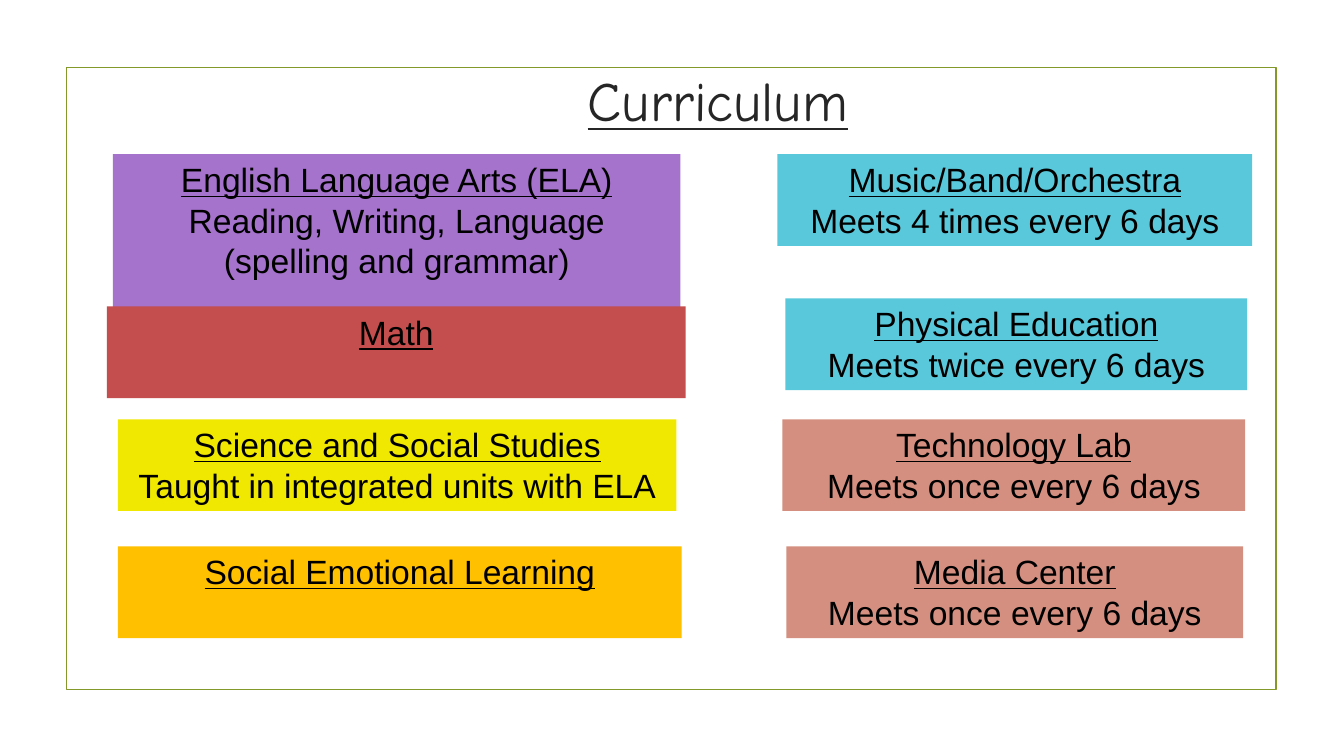
"""Build the Curriculum slide with its framed grid of subject boxes."""
from pptx import Presentation
from pptx.dml.color import RGBColor
from pptx.enum import shapes, text
from pptx.util import Inches, Pt

THEME = {
    "frame": "83992A", "title": "262626", "body": "000000",
    "violet": "A572CC", "red": "C44D4D", "yellow": "F0E800", "gold": "FFC000",
    "teal": "5AC8DB", "rose": "D58F81",
    "head": {"name": "Comic Neue", "size": Pt(39.6)},
    "text": {"name": "Arial", "size": Pt(24)},
}
LOW, BASE, TALL = 4.16, 5.42, 0.91
BOXES = [
    ("rose", 7.76, LOW, 4.59, TALL, "Technology Lab", "Meets once every 6 days"),
    ("rose", 7.8, BASE, 4.53, TALL, "Media Center", "Meets once every 6 days"),
    ("teal", 7.71, 1.53, 4.71, TALL, "Music/Band/Orchestra", "Meets 4 times every 6 days"),
    ("teal", 7.79, 2.96, 4.58, TALL, "Physical Education", "Meets twice every 6 days"),
    ("violet", 1.12, 1.53, 5.63, 1.72, "English Language Arts (ELA)",
     "Reading, Writing, Language (spelling and grammar)"),
    ("yellow", 1.17, LOW, 5.54, TALL, "Science and Social Studies",
     "Taught in integrated units with ELA"),
    ("red", 1.06, 3.04, 5.74, TALL, "Math"),
    ("gold", 1.17, BASE, 5.59, TALL, "Social Emotional Learning"),
]


def add_rect(left, top, width, height):
    """Add a plain rectangle without a shadow."""
    rect = slide.shapes.add_shape(
        shapes.MSO_SHAPE.RECTANGLE, *map(Inches, (left, top, width, height)))
    rect.shadow.inherit = False
    return rect


def write(frame, lines, style, color, anchor):
    """Fill a frame with centred lines, the first one underlined."""
    frame.word_wrap = True
    frame.vertical_anchor = anchor
    for i, line in enumerate(lines):
        para = frame.add_paragraph() if i else frame.paragraphs[0]
        para.alignment = text.PP_ALIGN.CENTER
        run = para.add_run()
        run.text = line
        for key, value in {**style, "underline": i == 0}.items():
            setattr(run.font, key, value)
        run.font.color.rgb = RGBColor.from_string(THEME[color])


deck = Presentation()
deck.slide_width, deck.slide_height = Inches(13.33), Inches(7.5)
slide = deck.slides.add_slide(deck.slide_layouts[6])

border = add_rect(0.66, 0.67, 12, 6.17)
border.fill.background()
border.line.color.rgb = RGBColor.from_string(THEME["frame"])
border.line.width = Pt(1.25)

title = slide.shapes.add_textbox(*map(Inches, (5.26, 0.58, 3.72, 0.82)))
write(title.text_frame, ["Curriculum"], THEME["head"], "title", text.MSO_ANCHOR.MIDDLE)

for color, left, top, width, height, *lines in BOXES:
    box = add_rect(left, top, width, height)
    box.fill.solid()
    box.fill.fore_color.rgb = RGBColor.from_string(THEME[color])
    box.line.fill.background()
    write(box.text_frame, lines, THEME["text"], "body", text.MSO_ANCHOR.TOP)

deck.save("out.pptx")
